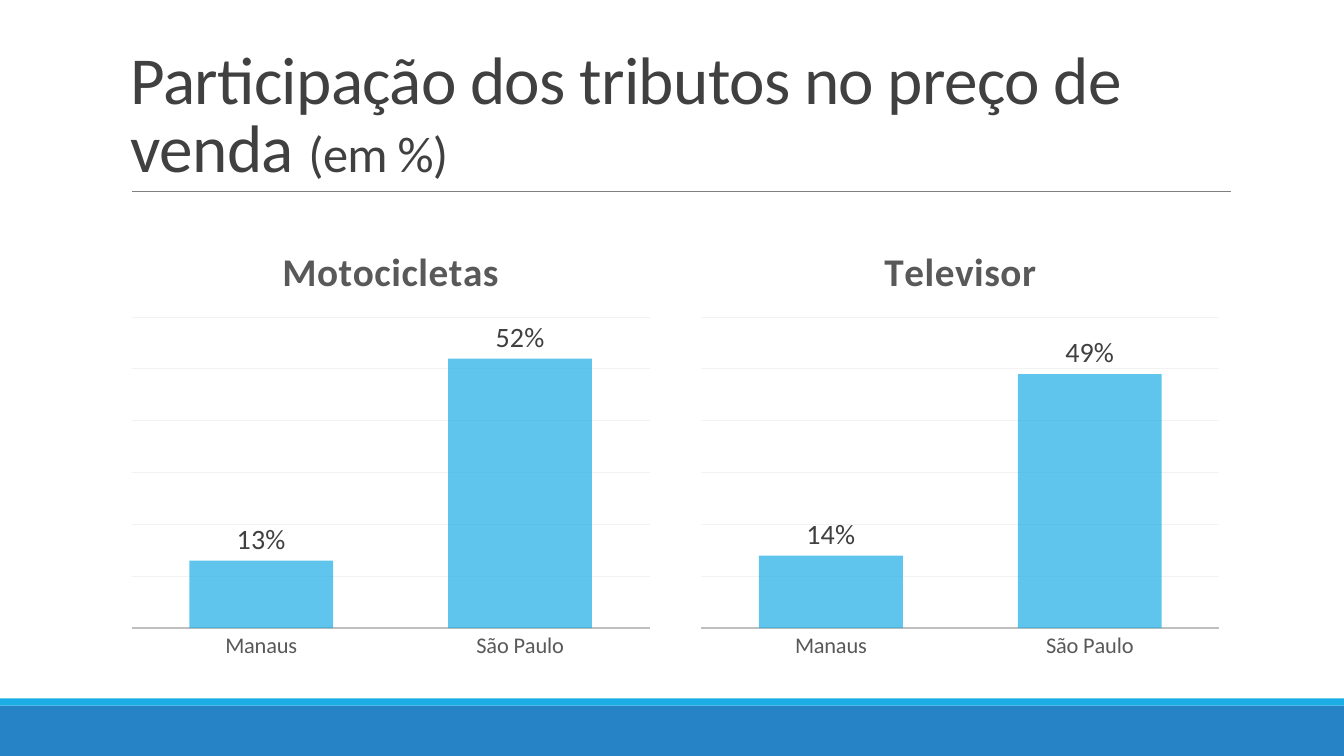
import pptx
import pptx.util
import pptx.dml.color
import pptx.chart.data
import pptx.enum.chart
import pptx.enum.shapes
import pptx.enum.text
import pptx.oxml
import lxml.etree
from pptx.util import Inches

FONT = "Calibri"
C = "{http://schemas.openxmlformats.org/drawingml/2006/chart}"
A = "{http://schemas.openxmlformats.org/drawingml/2006/main}"


def color(target, code):
    target.rgb = pptx.dml.color.RGBColor.from_string(code)


def write(para, text, size, code, bold=False, space=0):
    run = para.add_run()
    run.text = text
    run.font.name = FONT
    run.font.size = pptx.util.Pt(size)
    run.font.bold = bold
    color(run.font.color, code)
    run.font._element.set("spc", str(space))


deck = pptx.Presentation()
deck.slide_width = Inches(13.33)
deck.slide_height = Inches(7.5)
slide = deck.slides.add_slide(deck.slide_layouts[6])

for top, height, code in [(7, 0.5, "2683C6"), (6.93, 0.07, "1CADE4")]:
    band = slide.shapes.add_shape(
        pptx.enum.shapes.MSO_SHAPE.RECTANGLE,
        Inches(0), Inches(top), Inches(13.33), Inches(height))
    band.shadow.inherit = False
    band.fill.solid()
    color(band.fill.fore_color, code)
    band.line.fill.background()

rule = slide.shapes.add_connector(
    pptx.enum.shapes.MSO_CONNECTOR.STRAIGHT,
    Inches(1.31), Inches(1.9), Inches(12.21), Inches(1.9))
color(rule.line.color, "808080")
rule.line.width = pptx.util.Pt(0.5)
lxml.etree.SubElement(rule._element.spPr, A + "effectLst")

title = slide.shapes.add_textbox(Inches(1.2), Inches(0.31), Inches(11), Inches(1.59))
frame = title.text_frame
frame.word_wrap = True
frame.vertical_anchor = pptx.enum.text.MSO_ANCHOR.BOTTOM
para = frame.paragraphs[0]
para.line_spacing = 0.85
write(para, "Participação dos tributos no preço de venda ", 48, "404040", space=-50)
write(para, "(em %)", 36, "404040", space=-50)

charts = [
    (1.2, "Motocicletas", (0.13, 0.52)),
    (6.85, "Televisor", (0.14, 0.49)),
]
for left, name, values in charts:
    data = pptx.chart.data.CategoryChartData(number_format="0%")
    data.categories = ["Manaus", "São Paulo"]
    data.add_series("Series 1", values)
    chart = slide.shapes.add_chart(
        pptx.enum.chart.XL_CHART_TYPE.COLUMN_CLUSTERED,
        Inches(left), Inches(2.22), Inches(5.35), Inches(4.41), data).chart
    chart.font.name = FONT
    chart.font.size = pptx.util.Pt(10)
    chart.has_legend = False
    chart.has_title = True
    head = chart.chart_title.text_frame.paragraphs[0]
    write(head, name, 28, "595959", bold=True, space=50)
    chart.chart_title.include_in_layout = False

    axis = chart.category_axis
    axis.major_tick_mark = pptx.enum.chart.XL_TICK_MARK.NONE
    axis.tick_labels.font.name = FONT
    axis.tick_labels.font.size = pptx.util.Pt(16)
    color(axis.tick_labels.font.color, "595959")
    color(axis.format.line.color, "BFBFBF")
    axis.format.line.width = pptx.util.Pt(1.25)

    scale = chart.value_axis
    scale.visible = False
    scale.minimum_scale = 0
    scale.maximum_scale = 0.6
    scale.major_unit = 0.1
    scale.has_major_gridlines = True
    color(scale.major_gridlines.format.line.color, "F2F2F2")
    scale.major_gridlines.format.line.width = pptx.util.Pt(0.75)

    plot = chart.plots[0]
    plot.gap_width = 80
    plot.overlap = 25
    plot.vary_by_categories = False
    bars = plot.series[0]
    bars.format.fill.solid()
    color(bars.format.fill.fore_color, "1CADE4")
    tint = bars._element.find(f"{C}spPr/{A}solidFill/{A}srgbClr")
    lxml.etree.SubElement(tint, A + "alpha").set("val", "70000")

    labels = bars.data_labels
    labels.show_value = True
    labels.number_format = "0%"
    labels.number_format_is_linked = False
    labels.position = pptx.enum.chart.XL_LABEL_POSITION.OUTSIDE_END
    labels.font.name = FONT
    labels.font.size = pptx.util.Pt(20)
    color(labels.font.color, "404040")

    area = chart._chartSpace.find(f"{C}chart/{C}plotArea")
    for old in area.findall(C + "layout"):
        area.remove(old)
    layout = lxml.etree.Element(C + "layout")
    area.insert(0, layout)
    manual = lxml.etree.SubElement(layout, C + "manualLayout")
    for tag, value in [("layoutTarget", "inner"), ("xMode", "edge"), ("yMode", "edge"),
                       ("x", 0.02), ("y", 0.21), ("w", 0.96), ("h", 0.7)]:
        lxml.etree.SubElement(manual, C + tag).set("val", str(value))

deck.save("out.pptx")
